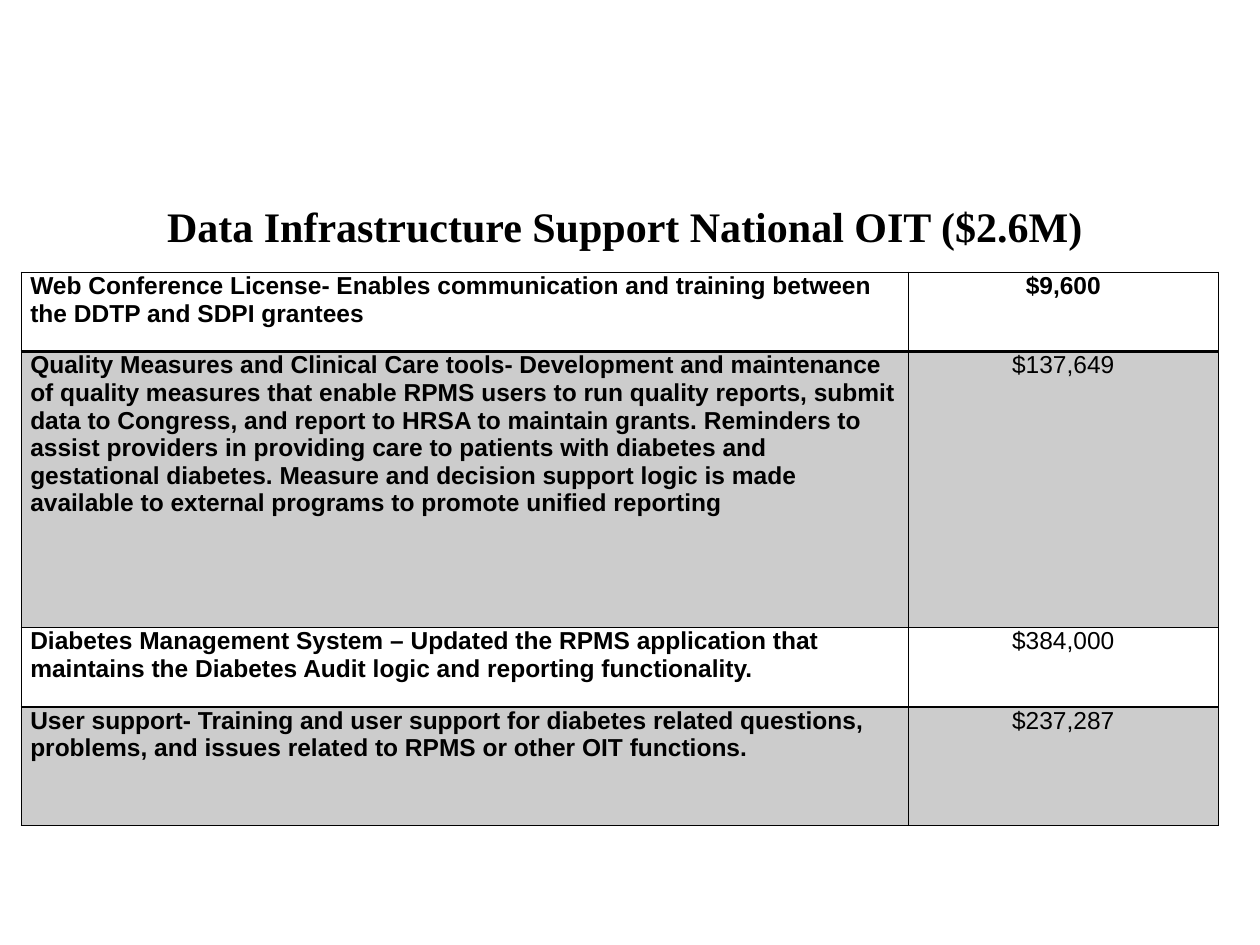
import pptx
import pptx.dml.color
import pptx.enum.text
import pptx.oxml
import pptx.oxml.ns
import pptx.util
from pptx.util import Cm

BLACK = pptx.dml.color.RGBColor(0x00, 0x00, 0x00)
ALIGN = pptx.enum.text.PP_ALIGN
ANCHOR = pptx.enum.text.MSO_ANCHOR

# Description, amount
BUDGET_ITEMS = [
    ("Web Conference License- Enables communication and training between "
     "the DDTP and SDPI grantees", "$9,600"),
    ("Quality Measures and Clinical Care tools- Development and maintenance of "
     "quality measures that enable RPMS users to run quality reports, submit "
     "data to Congress, and report to HRSA to maintain grants. Reminders to "
     "assist providers in providing care to patients with diabetes and "
     "gestational diabetes. Measure and decision support logic is made "
     "available to external programs to promote unified reporting", "$137,649"),
    ("Diabetes Management System – Updated the RPMS application that maintains "
     "the Diabetes Audit logic and reporting functionality.", "$384,000"),
    ("User support- Training and user support for diabetes related questions, "
     "problems, and issues related to RPMS or other OIT functions.", "$237,287"),
]
COLUMN_WIDTHS = [Cm(17.88), Cm(6.25)]
ROW_HEIGHTS = [Cm(1.6), Cm(5.56), Cm(1.6), Cm(2.39)]


def write_text(text_frame, text, font="Arial", size=14, bold=False,
               color=BLACK, align=ALIGN.LEFT):
    paragraph = text_frame.paragraphs[0]
    paragraph.alignment = align
    run = paragraph.add_run()
    run.text = text
    run.font.name = font
    run.font.size = pptx.util.Pt(size)
    run.font.bold = bold
    run.font.color.rgb = color


class SlideBuilder:
    def __init__(self, slide, border_color=BLACK, shade_percent=20):
        self.slide = slide
        self.border_color = border_color
        self.shade_percent = shade_percent

    def title(self, text, left, top, width, height):
        title = self.slide.shapes.title
        title.left, title.top, title.width, title.height = left, top, width, height
        title.text_frame.vertical_anchor = ANCHOR.MIDDLE
        write_text(title.text_frame, text, font="Times New Roman", size=24,
                   bold=True, align=ALIGN.CENTER)

    def borders(self, cell, **widths):
        properties = cell._tc.get_or_add_tcPr()
        for side in ("L", "R", "T", "B"):
            width = pptx.util.Pt(widths.get(side, 1))
            properties.append(pptx.oxml.parse_xml(
                f'<a:ln{side} {pptx.oxml.ns.nsdecls("a")} w="{width}">'
                f'<a:solidFill><a:srgbClr val="{self.border_color}"/></a:solidFill>'
                f'</a:ln{side}>'))

    def shade(self, cell):
        cell.fill.solid()
        cell.fill.fore_color.rgb = BLACK
        color = cell._tc.tcPr.find(
            "/".join(map(pptx.oxml.ns.qn, ("a:solidFill", "a:srgbClr"))))
        color.append(pptx.oxml.parse_xml(
            f'<a:alpha {pptx.oxml.ns.nsdecls("a")} val="{self.shade_percent * 1000}"/>'))

    def table(self, items, left, top, column_widths, row_heights):
        table = self.slide.shapes.add_table(
            len(items), len(column_widths), left, top,
            sum(column_widths), sum(row_heights)).table
        table.first_row = table.horz_banding = False
        for column, width in zip(table.columns, column_widths):
            column.width = width
        for row, height in zip(table.rows, row_heights):
            row.height = height

        for row_index, item in enumerate(items):
            for column_index, text in enumerate(item):
                cell = table.cell(row_index, column_index)
                cell.margin_left = cell.margin_right = Cm(0.18)
                cell.margin_top = cell.margin_bottom = 0
                cell.vertical_anchor = ANCHOR.TOP
                write_text(cell.text_frame, text,
                           bold=row_index == 0 or column_index == 0,
                           align=ALIGN.CENTER if column_index else ALIGN.LEFT)
                # A heavier rule separates the first row
                self.borders(cell, T=2 if row_index == 1 else 1,
                             B=2 if row_index == 0 else 1)
                if row_index % 2:
                    self.shade(cell)
                else:
                    cell.fill.background()


def main():
    presentation = pptx.Presentation()
    presentation.slide_width = Cm(25.4)
    presentation.slide_height = Cm(19.05)
    title_only = presentation.slide_layouts[5]
    builder = SlideBuilder(presentation.slides.add_slide(title_only))

    # Title
    builder.title("Data Infrastructure Support National OIT ($2.6M) ",
                  Cm(1.27), Cm(3.6), Cm(22.86), Cm(1.9))

    # Budget table
    builder.table(BUDGET_ITEMS, Cm(0.43), Cm(5.49), COLUMN_WIDTHS, ROW_HEIGHTS)

    presentation.save("out.pptx")


if __name__ == "__main__":
    main()
